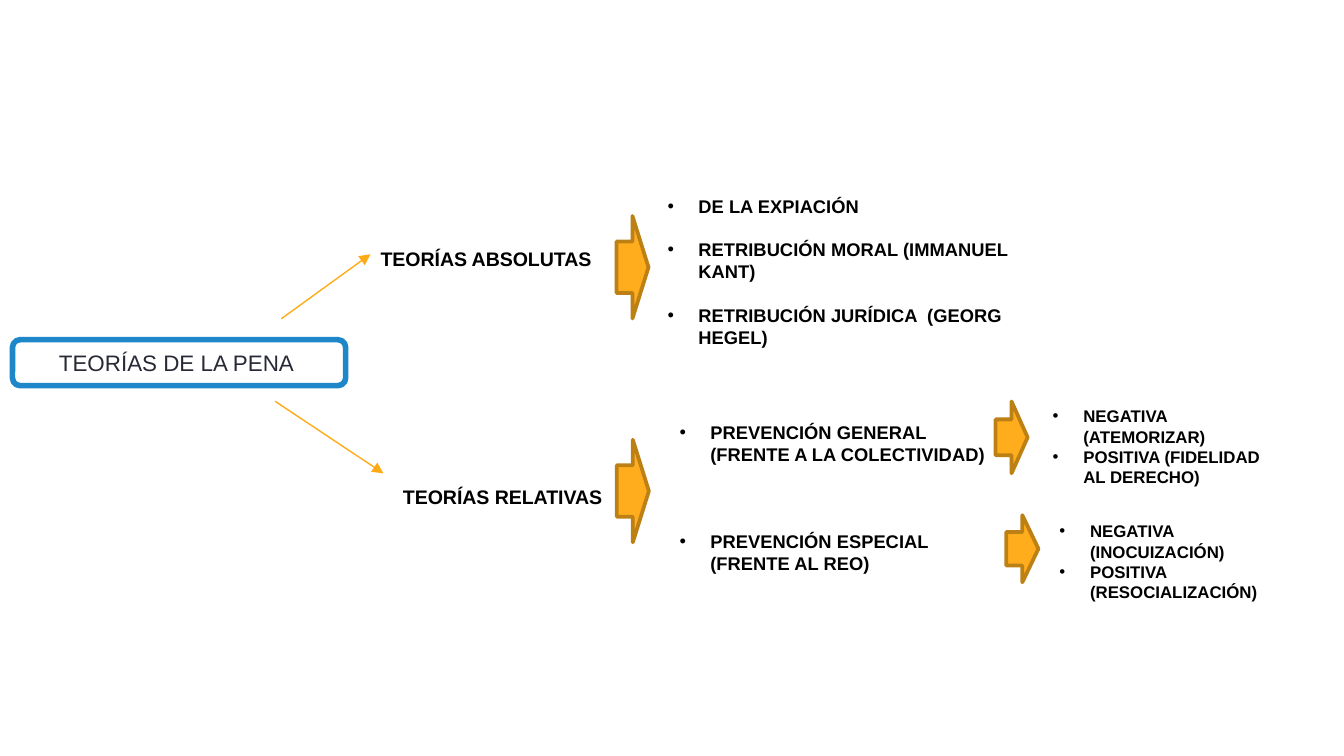
from lxml import etree
from pptx import Presentation
from pptx.dml.color import RGBColor
from pptx.enum.shapes import MSO_CONNECTOR, MSO_SHAPE
from pptx.enum.text import MSO_ANCHOR, PP_ALIGN
from pptx.oxml.ns import qn
from pptx.util import Pt

ROUND = MSO_SHAPE.ROUNDED_RECTANGLE
ARROW = MSO_SHAPE.RIGHT_ARROW
LINE = MSO_CONNECTOR.STRAIGHT
MIDDLE = MSO_ANCHOR.MIDDLE
LEFT, CENTER, JUSTIFY = PP_ALIGN.LEFT, PP_ALIGN.CENTER, PP_ALIGN.JUSTIFY
INDENT = Pt(16.5)


def color(code):
    return RGBColor.from_string(code)


def write(box, lines, size, bullet=False, gap=0, align=LEFT):
    """Fill a text box with bold lines, gap points apart."""
    frame = box.text_frame
    frame.word_wrap = bullet
    frame.text = "\n".join(lines)
    for i, para in enumerate(frame.paragraphs):
        para.alignment = align
        if i and gap:
            para.space_before = Pt(gap)
        if bullet:
            props = para._p.get_or_add_pPr()
            props.set("marL", str(INDENT))
            props.set("indent", str(-INDENT))
            tint = etree.SubElement(props, qn("a:buClr"))
            etree.SubElement(tint, qn("a:srgbClr")).set("val", "000000")
            etree.SubElement(props, qn("a:buFont")).set("typeface", "Arial")
            etree.SubElement(props, qn("a:buChar")).set("char", "•")
        for run in para.runs:
            run.font.name = "Arial"
            run.font.size = Pt(size)
            run.font.bold = True
            run.font.color.rgb = color("000000")


deck = Presentation()
deck.slide_width, deck.slide_height = Pt(720), Pt(405)
slide = deck.slides.add_slide(deck.slide_layouts[6])
shapes = slide.shapes

# Main topic
topic = shapes.add_shape(ROUND, Pt(6.7), Pt(182), Pt(178.5), Pt(24.6))
topic.shadow.inherit = False
topic.fill.background()
topic.line.color.rgb = color("1E87CA")
topic.line.width = Pt(3)
frame = topic.text_frame
frame.text = "TEORÍAS DE LA PENA "
frame.vertical_anchor = MIDDLE
para = frame.paragraphs[0]
para.alignment = CENTER
font = para.runs[0].font
font.name, font.size = "Arial", Pt(12)
font.color.rgb = color("272A36")

# The two families of theories
for text, x, y, w in [
    ("TEORÍAS RELATIVAS", 208.8, 256.5, 124.5),
    ("TEORÍAS ABSOLUTAS", 196.8, 129, 130.5),
]:
    write(shapes.add_textbox(Pt(x), Pt(y), Pt(w), Pt(20)), [text], 10.5)

# Bulleted lists
for lines, x, y, w, h, size, gap, align in [
    (["DE LA EXPIACIÓN", "RETRIBUCIÓN MORAL (IMMANUEL KANT)",
      "RETRIBUCIÓN JURÍDICA  (GEORG HEGEL)"],
     350.6, 101, 201, 115, 9.8, 11.5, LEFT),
    (["PREVENCIÓN GENERAL (FRENTE A LA COLECTIVIDAD)",
      "PREVENCIÓN ESPECIAL (FRENTE AL REO)"],
     357, 222, 179.5, 90, 9.8, 35, LEFT),
    (["NEGATIVA (ATEMORIZAR)", "POSITIVA (FIDELIDAD AL DERECHO)"],
     556.8, 214, 133, 51, 9, 0, LEFT),
    (["NEGATIVA (INOCUIZACIÓN)", "POSITIVA (RESOCIALIZACIÓN)"],
     560.4, 275.6, 136, 51, 9, 0, JUSTIFY),
]:
    box = shapes.add_textbox(Pt(x), Pt(y), Pt(w), Pt(h))
    write(box, lines, size, True, gap, align)

# Block arrows
for x, y, h in [(330.2, 115.7, 55), (330.4, 235.6, 55),
                (533.3, 215.1, 38.5), (539.1, 276, 36)]:
    arrow = shapes.add_shape(ARROW, Pt(x), Pt(y), Pt(17.2), Pt(h))
    arrow.shadow.inherit = False
    arrow.fill.solid()
    arrow.fill.fore_color.rgb = color("FFAD1D")
    arrow.line.color.rgb = color("BD8015")
    arrow.line.width = Pt(2)

# Thin arrows from the topic to each family
for x1, y1, x2, y2 in [(150.7, 170.8, 198.5, 136.2),
                       (147.4, 215, 205.4, 253.6)]:
    link = shapes.add_connector(LINE, Pt(x1), Pt(y1), Pt(x2), Pt(y2))
    link.line.color.rgb = color("FFAB17")
    link.line.width = Pt(0.75)
    tip = etree.SubElement(link.line._get_or_add_ln(), qn("a:tailEnd"))
    tip.set("type", "triangle")
    etree.SubElement(link._element.spPr, qn("a:effectLst"))

deck.save("out.pptx")
